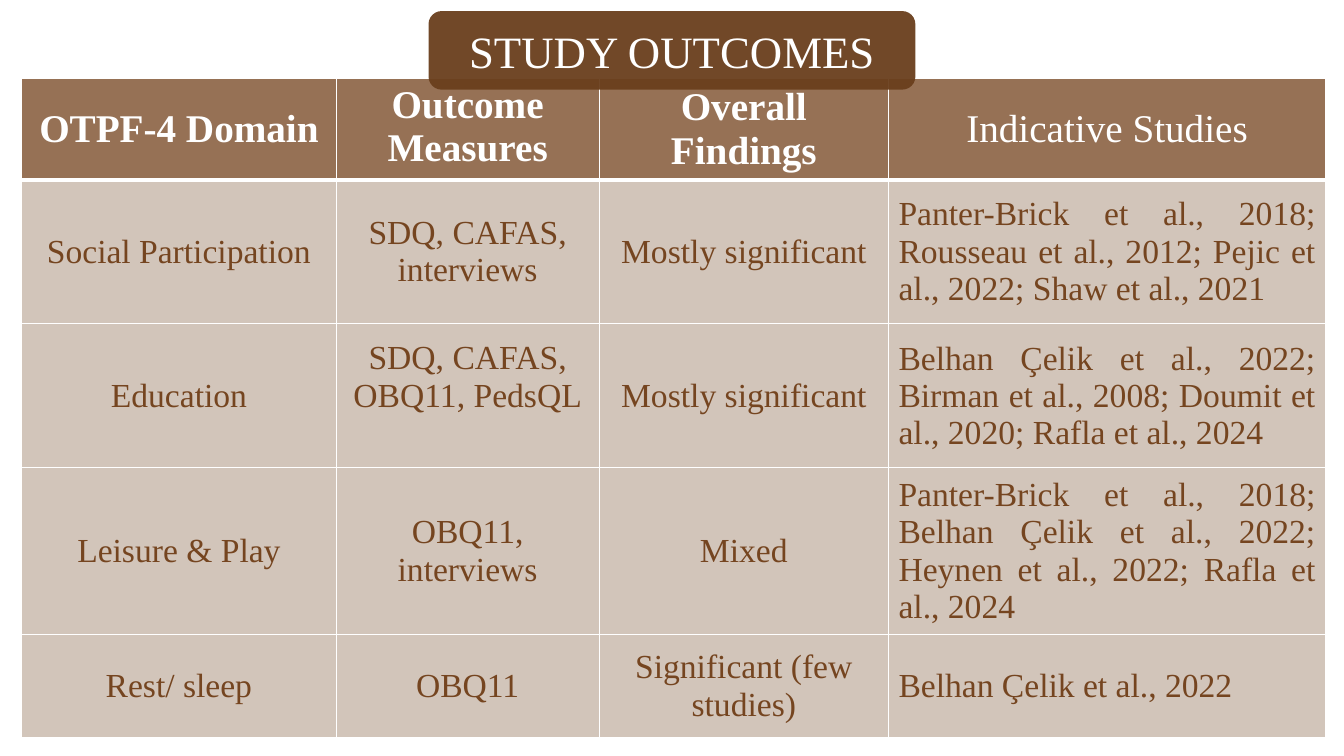
from lxml import etree
from pptx import Presentation
from pptx.dml.color import RGBColor
from pptx.enum.shapes import MSO_SHAPE
from pptx.enum.text import MSO_ANCHOR, PP_ALIGN
from pptx.oxml.ns import qn
from pptx.util import Cm, Pt

ROUNDED = MSO_SHAPE.ROUNDED_RECTANGLE
TOP, MIDDLE = MSO_ANCHOR.TOP, MSO_ANCHOR.MIDDLE
CENTER, JUSTIFY = PP_ALIGN.CENTER, PP_ALIGN.JUSTIFY

FONT = "Times New Roman"
WHITE, BROWN, DARK_BROWN = "FFFFFF", "754520", "6A3F1D"
COLUMN_WIDTHS = (7.92, 6.63, 7.29, 11.02)
ROW_HEIGHTS = (2.55, 3.63, 3.63, 4.2, 2.6)
OUTCOMES = (
    ("OTPF-4 Domain", "Outcome Measures", "Overall Findings", "Indicative Studies"),
    ("Social Participation", "SDQ, CAFAS, interviews", "Mostly significant",
     "Panter-Brick et al., 2018; Rousseau et al., 2012; Pejic et al., 2022; "
     "Shaw et al., 2021"),
    ("Education", "SDQ, CAFAS, OBQ11, PedsQL", "Mostly significant",
     "Belhan Çelik et al., 2022; Birman et al., 2008; Doumit et al., 2020; "
     "Rafla et al., 2024"),
    ("Leisure & Play", "OBQ11, interviews", "Mixed",
     "Panter-Brick et al., 2018; Belhan Çelik et al., 2022; Heynen et al., 2022; "
     "Rafla et al., 2024"),
    ("Rest/ sleep", "OBQ11", "Significant (few studies)", "Belhan Çelik et al., 2022"),
)


def color(value):
    """Turn a hex string into a colour."""
    return RGBColor.from_string(value)


def fill_translucent(fill, properties, value, opacity):
    """Apply a solid fill with the given opacity in percent."""
    fill.solid()
    fill.fore_color.rgb = color(value)
    solid = properties.find(qn("a:solidFill"))
    etree.SubElement(solid[0], qn("a:alpha"), val=str(opacity * 1000))


def write_text(frame, text, size, value, alignment=CENTER, bold=False):
    """Write one styled paragraph into a text frame."""
    paragraph = frame.paragraphs[0]
    paragraph.text = text
    paragraph.alignment = alignment
    font = paragraph.font
    font.name, font.size, font.bold = FONT, Pt(size), bold
    font.color.rgb = color(value)


def add_borders(properties, bottom_width):
    """Draw white lines on the four sides of a cell."""
    for side, width in (("L", 1), ("R", 1), ("T", 1), ("B", bottom_width)):
        line = etree.SubElement(properties, qn(f"a:ln{side}"), w=str(Pt(width)))
        solid = etree.SubElement(line, qn("a:solidFill"))
        etree.SubElement(solid, qn("a:srgbClr"), val=WHITE)


def style_cell(cell, text, is_header, is_studies):
    """Fill one table cell with its text, borders and colour."""
    properties = cell._tc.get_or_add_tcPr()
    add_borders(properties, 3 if is_header else 1)
    cell.vertical_anchor = MIDDLE
    if is_header:
        fill_translucent(cell.fill, properties, BROWN, 76)
        write_text(cell.text_frame, text, 28, WHITE, bold=not is_studies)
    else:
        fill_translucent(cell.fill, properties, DARK_BROWN, 30)
        alignment = JUSTIFY if is_studies else CENTER
        write_text(cell.text_frame, text, 24, BROWN, alignment)


def add_outcome_table(slide):
    """Add the table of outcomes by domain."""
    table = slide.shapes.add_table(
        len(OUTCOMES), len(COLUMN_WIDTHS), Cm(0.55), Cm(1.98),
        Cm(sum(COLUMN_WIDTHS)), Cm(sum(ROW_HEIGHTS))).table
    table.horz_banding = False
    for column, width in zip(table.columns, COLUMN_WIDTHS):
        column.width = Cm(width)
    for row, height in zip(table.rows, ROW_HEIGHTS):
        row.height = Cm(height)
    last_column = len(COLUMN_WIDTHS) - 1
    for row_index, texts in enumerate(OUTCOMES):
        for column_index, text in enumerate(texts):
            style_cell(table.cell(row_index, column_index), text,
                       row_index == 0, column_index == last_column)
    table.cell(0, 1).vertical_anchor = TOP
    table.cell(2, 1).margin_bottom = Cm(1.07)


def add_title(slide):
    """Add the rounded title banner over the table's top edge."""
    shape = slide.shapes.add_shape(ROUNDED, Cm(10.8), Cm(0.28), Cm(12.27), Cm(1.98))
    shape.shadow.inherit = False
    shape.line.fill.background()
    fill_translucent(shape.fill, shape._element.spPr, DARK_BROWN, 95)
    shape.text_frame.vertical_anchor = MIDDLE
    write_text(shape.text_frame, "STUDY OUTCOMES", 32, WHITE)


def main():
    """Build the study outcomes slide."""
    presentation = Presentation()
    presentation.slide_width, presentation.slide_height = Cm(33.87), Cm(19.05)
    slide = presentation.slides.add_slide(presentation.slide_layouts[6])
    add_outcome_table(slide)
    add_title(slide)
    presentation.save("out.pptx")


if __name__ == "__main__":
    main()
